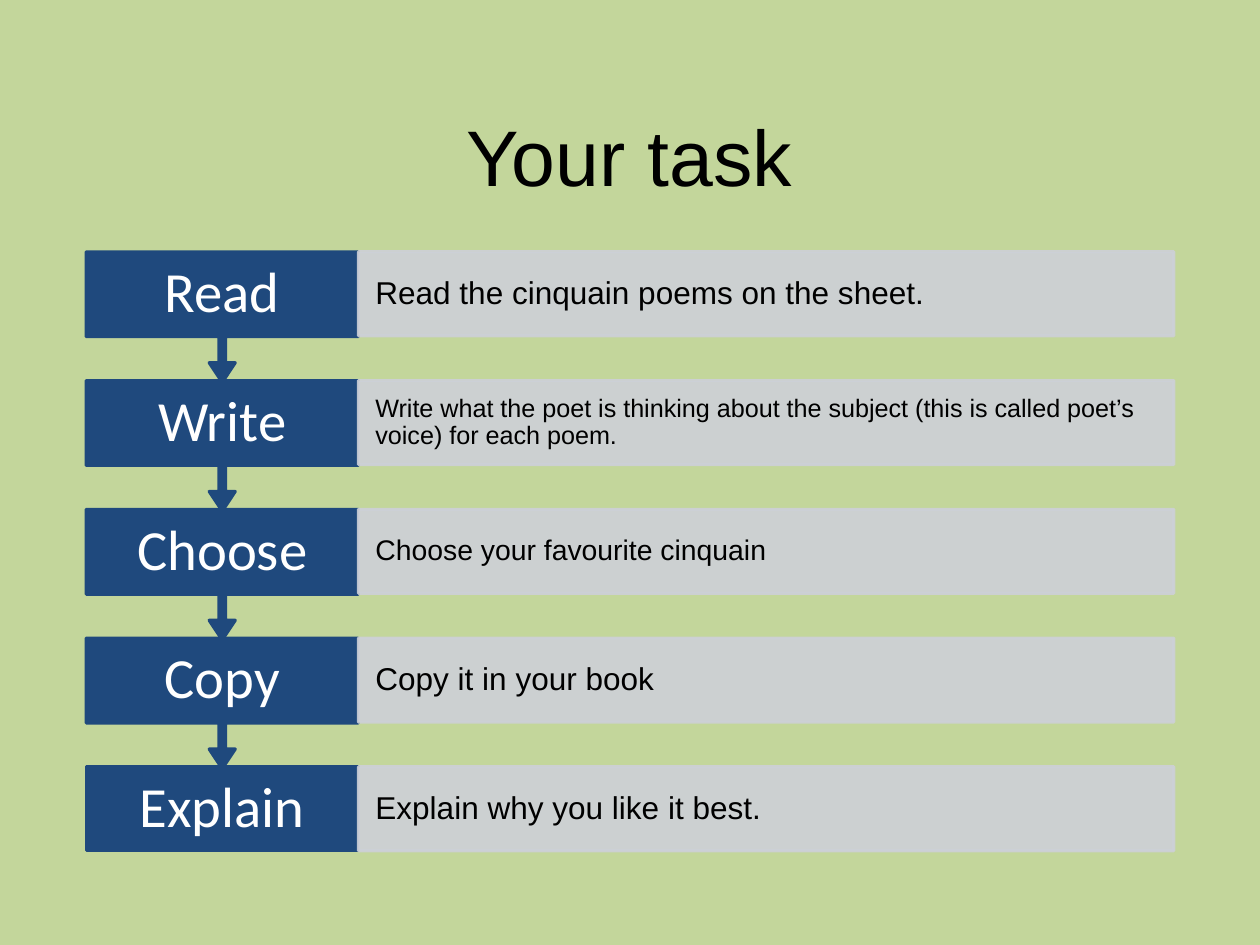
"""Build the "Your task" slide: five steps linked by downward arrows."""
from dataclasses import dataclass

from lxml import etree
from pptx import Presentation
from pptx.dml.color import RGBColor
from pptx.enum.shapes import MSO_SHAPE
from pptx.enum.text import MSO_ANCHOR, PP_ALIGN
from pptx.oxml.ns import qn
from pptx.util import Inches, Pt

RECTANGLE = MSO_SHAPE.RECTANGLE
ARROW_BOX = MSO_SHAPE.DOWN_ARROW_CALLOUT
MIDDLE = MSO_ANCHOR.MIDDLE
LEFT, CENTER = PP_ALIGN.LEFT, PP_ALIGN.CENTER


@dataclass(frozen=True)
class Theme:
    background: str = "C3D69B"
    step: str = "1F497D"
    detail: str = "CDD0D7"
    detail_opacity: int = 90
    light: str = "FFFFFF"
    dark: str = "000000"
    body_font: str = "Arial"
    step_font: str = "Calibri"
    title_size: int = 50
    step_size: int = 36
    outline: int = 2


THEME = Theme()
TITLE = "Your task"
STEPS = [
    ("Read", "Read the cinquain poems on the sheet.", 20),
    ("Write", "Write what the poet is thinking about the subject "
              "(this is called poet’s voice) for each poem.", 16),
    ("Choose", "Choose your favourite cinquain", 18),
    ("Copy", "Copy it in your book", 20),
    ("Explain", "Explain why you like it best.", 20),
]

SLIDE_WIDTH, SLIDE_HEIGHT = 11.11, 8.33
MARGIN = 0.76
TITLE_TOP, TITLE_WIDTH, TITLE_HEIGHT = 0.68, 9.58, 1.38
STEP_WIDTH, DETAIL_WIDTH = 2.4, 7.19
FIRST_TOP, LAST_TOP = 2.22, 6.76
ROW_HEIGHT, ARROW_BOX_HEIGHT = 0.74, 1.15
ARROW_PROPORTIONS = (0.05, 0.1, 0.15, 0.65)
STEP_INSET, DETAIL_INSET = 0.17, 0.15


def write(holder, text, font, size, color, align, inset):
    frame = holder.text_frame
    frame.word_wrap = True
    frame.vertical_anchor = MIDDLE
    frame.margin_left = frame.margin_right = Inches(inset)
    frame.margin_top = frame.margin_bottom = 0
    frame.text = text
    paragraph = frame.paragraphs[0]
    paragraph.alignment = align
    paragraph.line_spacing = 0.9
    letters = paragraph.runs[0].font
    letters.name, letters.size = font, Pt(size)
    letters.color.rgb = RGBColor.from_string(color)


def add_box(slide, preset, left, top, width, height, color, opacity=100):
    box = slide.shapes.add_shape(
        preset, Inches(left), Inches(top), Inches(width), Inches(height))
    box.shadow.inherit = False
    box.line.width = Pt(THEME.outline)
    for fill in (box.fill, box.line.fill):
        fill.solid()
        fill.fore_color.rgb = RGBColor.from_string(color)
    if opacity < 100:
        for tint in box.element.spPr.iter(qn("a:srgbClr")):
            etree.SubElement(tint, qn("a:alpha"), val=str(opacity * 1000))
    return box


def add_step(slide, index, name, detail, detail_size):
    last = len(STEPS) - 1
    top = FIRST_TOP + index * (LAST_TOP - FIRST_TOP) / last
    if index == last:
        step = add_box(slide, RECTANGLE, MARGIN, top, STEP_WIDTH, ROW_HEIGHT, THEME.step)
    else:
        step = add_box(slide, ARROW_BOX, MARGIN, top, STEP_WIDTH, ARROW_BOX_HEIGHT, THEME.step)
        for position, proportion in enumerate(ARROW_PROPORTIONS):
            step.adjustments[position] = proportion
    write(step, name, THEME.step_font, THEME.step_size, THEME.light, CENTER, STEP_INSET)

    description = add_box(slide, RECTANGLE, MARGIN + STEP_WIDTH, top, DETAIL_WIDTH,
                          ROW_HEIGHT, THEME.detail, THEME.detail_opacity)
    write(description, detail, THEME.body_font, detail_size, THEME.dark, LEFT, DETAIL_INSET)


def main():
    deck = Presentation()
    deck.slide_width, deck.slide_height = Inches(SLIDE_WIDTH), Inches(SLIDE_HEIGHT)
    slide = deck.slides.add_slide(deck.slide_layouts[6])
    slide.background.fill.solid()
    slide.background.fill.fore_color.rgb = RGBColor.from_string(THEME.background)

    title = slide.shapes.add_textbox(
        Inches(MARGIN), Inches(TITLE_TOP), Inches(TITLE_WIDTH), Inches(TITLE_HEIGHT))
    write(title, TITLE, THEME.body_font, THEME.title_size, THEME.dark, CENTER, 0.1)
    title.text_frame.paragraphs[0].line_spacing = 1.0

    for index, step in reversed(list(enumerate(STEPS))):
        add_step(slide, index, *step)
    deck.save("out.pptx")


if __name__ == "__main__":
    main()
